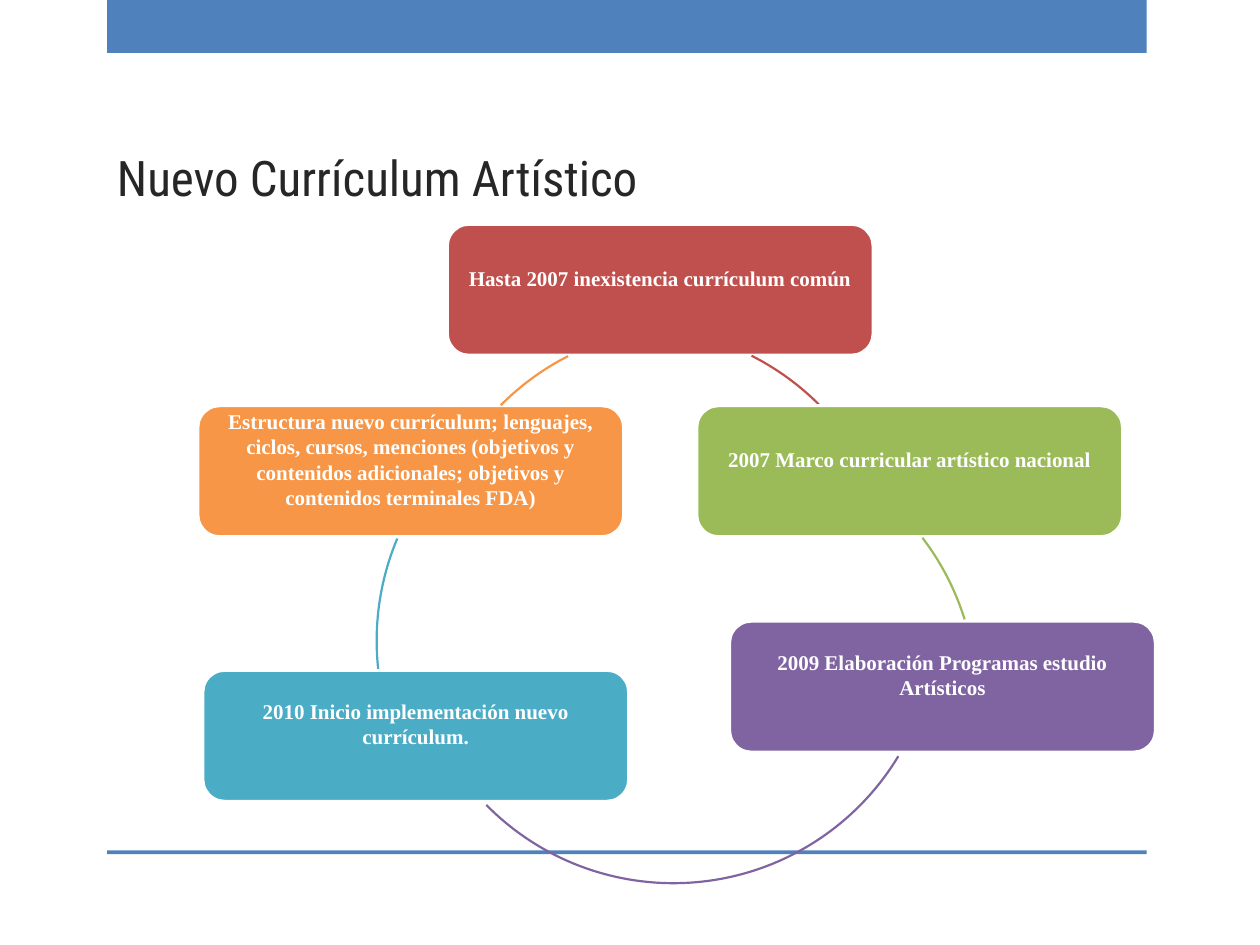
from pptx import Presentation
from pptx.dml.color import RGBColor
from pptx.enum import shapes, text
from pptx.util import Inches, Pt

COLORS = {
    "bar": "4F81BD",
    "title": "262626",
    "white": "FFFFFF",
    "red": "C0504D",
    "green": "9BBB59",
    "purple": "8064A2",
    "teal": "4BACC6",
    "orange": "F79646",
}
STEP_WIDTH, STEP_HEIGHT = 3.38, 1.04
CIRCLE = 4.17  # diameter of the circles that the arcs belong to

# Colour, left, top, wording
STEPS = [
    ("red", 3.55, 1.78, "Hasta 2007 inexistencia currículum común"),
    ("green", 5.53, 3.22, "2007 Marco curricular artístico nacional"),
    ("purple", 5.79, 4.93, "2009 Elaboración Programas estudio Artísticos"),
    ("teal", 1.61, 5.32, "2010 Inicio implementación nuevo currículum."),
    ("orange", 1.57, 3.22,
     "Estructura nuevo currículum; lenguajes, ciclos, cursos, menciones "
     "(objetivos y contenidos adicionales; objetivos y contenidos terminales FDA)"),
]

# Colour, circle left, circle top, start and end angle (clockwise from east)
ARCS = [
    ("red", 2.94, 2.6, 296.8, 315.2),
    ("green", 3.58, 3.45, 322.6, 342.8),
    ("purple", 3.26, 2.84, 31.1, 135.4),
    ("teal", 2.99, 3.0, 173.8, 202.9),
    ("orange", 3.37, 2.6, 224.8, 243.0),
]


def rgb(name):
    return RGBColor.from_string(COLORS[name])


def add_block(page, kind, left, top, width, height, fill=None, line=None, weight=1):
    block = page.shapes.add_shape(
        kind, Inches(left), Inches(top), Inches(width), Inches(height))
    block.shadow.inherit = False
    if fill:
        block.fill.solid()
        block.fill.fore_color.rgb = rgb(fill)
    else:
        block.fill.background()
    if line:
        block.line.color.rgb = rgb(line)
        block.line.width = Pt(weight)
    else:
        block.line.fill.background()
    return block


def write(box, wording, *, size, font, color, bold=False, align=text.PP_ALIGN.LEFT,
          anchor=text.MSO_ANCHOR.MIDDLE, insets=(0.1, 0.05, 0.1, 0.05)):
    """Fill a shape with one paragraph; insets run left, top, right, bottom."""
    frame = box.text_frame
    frame.word_wrap = True
    frame.vertical_anchor = anchor
    (frame.margin_left, frame.margin_top,
     frame.margin_right, frame.margin_bottom) = map(Inches, insets)
    para = frame.paragraphs[0]
    para.alignment = align
    span = para.add_run()
    span.text = wording
    span.font.size = Pt(size)
    span.font.name = font
    span.font.bold = bold
    span.font.color.rgb = rgb(color)


def add_title(page, wording):
    box = page.shapes.add_textbox(Inches(0.83), Inches(0.44), Inches(7.75), Inches(1.25))
    write(box, wording, size=28, font="Roboto Condensed", color="title",
          anchor=text.MSO_ANCHOR.BOTTOM)


def add_step(page, color, left, top, wording):
    box = add_block(page, shapes.MSO_SHAPE.ROUNDED_RECTANGLE, left, top,
                    STEP_WIDTH, STEP_HEIGHT, fill=color, line="white", weight=1.75)
    # The larger bottom inset lifts the text above the middle
    write(box, wording, size=12, font="Times New Roman", color="white", bold=True,
          align=text.PP_ALIGN.CENTER, insets=(0.05, 0, 0.05, 0.19))


def add_arc(page, color, left, top, start, end):
    arc = add_block(page, shapes.MSO_SHAPE.ARC, left, top, CIRCLE, CIRCLE,
                    line=color, weight=1.25)
    # Angles are stored in 1/60000 degree, adjustments in 1/100000
    for index, angle in enumerate((start, end)):
        arc.adjustments[index] = angle * 0.6


def main():
    deck = Presentation()
    deck.slide_width, deck.slide_height = Inches(10), Inches(7.5)
    page = deck.slides.add_slide(deck.slide_layouts[6])

    # Bars at top and bottom
    for top, height in ((0, 0.42), (6.75, 0.03)):
        add_block(page, shapes.MSO_SHAPE.RECTANGLE, 0.85, top, 8.25, height, fill="bar")

    add_title(page, "Nuevo Currículum Artístico")

    # Cycle of steps, each followed by its arc
    for step, arc in zip(STEPS, ARCS):
        add_step(page, *step)
        add_arc(page, *arc)

    deck.save("out.pptx")


if __name__ == "__main__":
    main()
